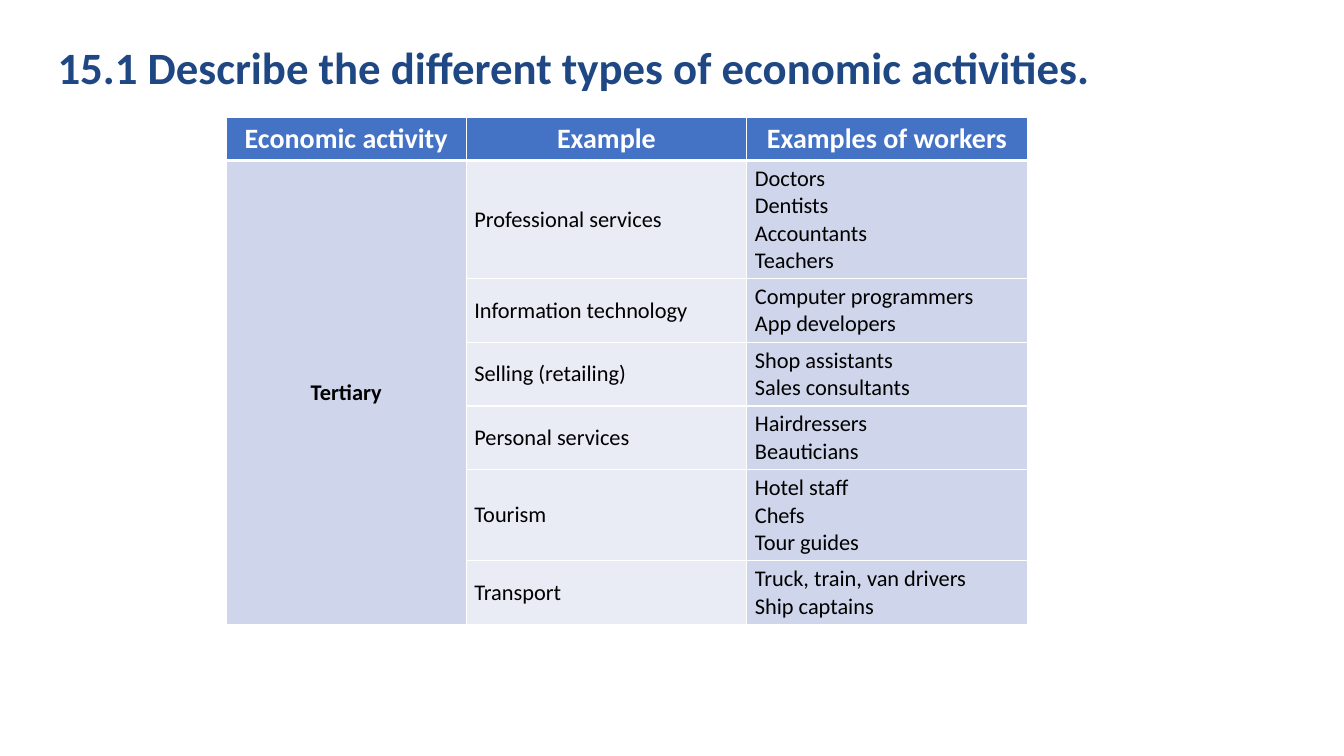
from lxml import etree
from pptx import Presentation
from pptx.dml.color import RGBColor
from pptx.enum.text import MSO_ANCHOR, PP_ALIGN
from pptx.oxml.ns import qn
from pptx.util import Pt

LEFT, CENTER = PP_ALIGN.LEFT, PP_ALIGN.CENTER
TOP, MIDDLE = MSO_ANCHOR.TOP, MSO_ANCHOR.MIDDLE

# Content
TITLE = "15.1 Describe the different types of economic activities."
HEADERS = ["Economic activity", "Example", "Examples of workers"]
ACTIVITY = "Tertiary"
SERVICES = [
    ("Professional services", ["Doctors", "Dentists", "Accountants", "Teachers"]),
    ("Information technology", ["Computer programmers", "App developers"]),
    ("Selling (retailing)", ["Shop assistants", "Sales consultants"]),
    ("Personal services", ["Hairdressers", "Beauticians"]),
    ("Tourism", ["Hotel staff", "Chefs", "Tour guides"]),
    ("Transport", ["Truck, train, van drivers", "Ship captains"]),
]

# Style, lengths in points
FONT = "Calibri"
NAVY, BLUE, WHITE, BLACK = "1E4783", "4472C4", "FFFFFF", "000000"
BAND, PALE = "CFD5EA", "E9EBF5"
COLUMN_WIDTHS = [171.4, 200.4, 200.4]
HEADER_HEIGHT, LINE_HEIGHT = 31, 19.5
SIDE_INSET, END_INSET = 5.85, 3.25


def color(value):
    return RGBColor.from_string(value)


def style_text(frame, size, ink, bold, align):
    for para in frame.paragraphs:
        para.alignment = align
        for span in para.runs:
            span.font.name = FONT
            span.font.size = Pt(size)
            span.font.bold = bold
            span.font.color.rgb = color(ink)


def set_borders(cell, top, bottom):
    properties = cell._tc.get_or_add_tcPr()
    sides = [("a:lnL", 1), ("a:lnR", 1), ("a:lnT", top), ("a:lnB", bottom)]
    for position, (tag, width) in enumerate(sides):
        line = etree.Element(qn(tag), w=str(Pt(width)))
        fill = etree.SubElement(line, qn("a:solidFill"))
        etree.SubElement(fill, qn("a:srgbClr"), val=WHITE)
        properties.insert(position, line)


def fill_cell(cell, text, fill, size=16, ink=BLACK, bold=False, align=LEFT, anchor=TOP):
    cell.text = text
    cell.fill.solid()
    cell.fill.fore_color.rgb = color(fill)
    cell.vertical_anchor = anchor
    cell.margin_left = cell.margin_right = Pt(SIDE_INSET)
    cell.margin_top = cell.margin_bottom = Pt(END_INSET)
    style_text(cell.text_frame, size, ink, bold, align)


deck = Presentation()
deck.slide_width, deck.slide_height = Pt(960), Pt(540)
page = deck.slides.add_slide(deck.slide_layouts[6])

# Title
box = page.shapes.add_textbox(Pt(34), Pt(28), Pt(887), Pt(44))
frame = box.text_frame
frame.word_wrap = True
frame.vertical_anchor = MIDDLE
frame.text = TITLE
frame.paragraphs[0].line_spacing = 0.9
style_text(frame, 32, NAVY, True, LEFT)

# Table grid: row heights follow the number of workers
heights = [HEADER_HEIGHT]
heights += [len(workers) * LINE_HEIGHT + 2 * END_INSET for _, workers in SERVICES]
table = page.shapes.add_table(
    len(heights), len(HEADERS), Pt(161.6), Pt(83.6),
    Pt(sum(COLUMN_WIDTHS)), Pt(sum(heights))).table
for column, width in zip(table.columns, COLUMN_WIDTHS):
    column.width = Pt(width)
for row, height in zip(table.rows, heights):
    row.height = Pt(height)

# Table cells
for index, header in enumerate(HEADERS):
    fill_cell(table.cell(0, index), header, BLUE, 20, WHITE, True, CENTER)
for index, (service, workers) in enumerate(SERVICES, 1):
    fill_cell(table.cell(index, 1), service, PALE, anchor=MIDDLE)
    fill_cell(table.cell(index, 2), "\n".join(workers), BAND)
table.cell(1, 0).merge(table.cell(len(SERVICES), 0))
fill_cell(table.cell(1, 0), ACTIVITY, BAND, bold=True, align=CENTER, anchor=MIDDLE)

# White grid lines, thicker below the header
for index, row in enumerate(table.rows):
    for cell in row.cells:
        set_borders(cell, 3 if index == 1 else 1, 3 if index == 0 else 1)

deck.save("out.pptx")
